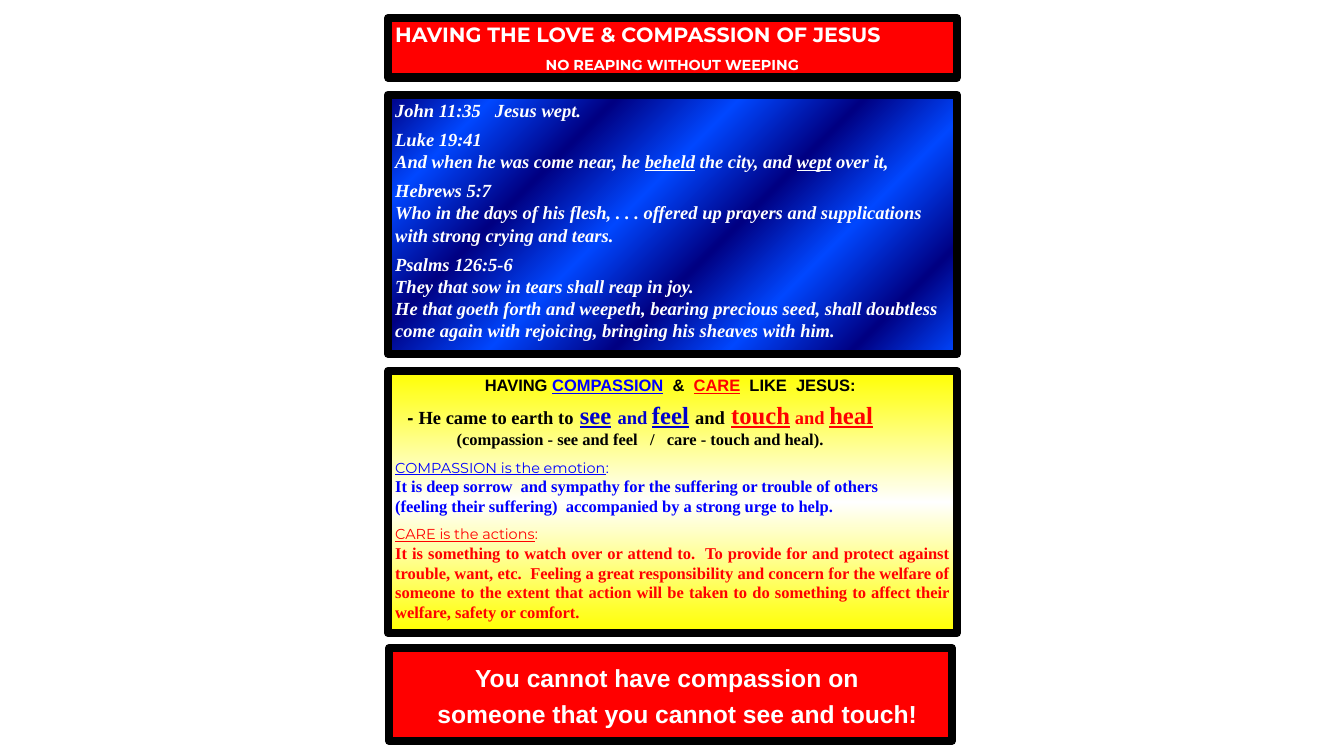
from dataclasses import dataclass, field, replace

from lxml import etree
from pptx import Presentation
from pptx import util as u
from pptx.dml.color import RGBColor
from pptx.enum import shapes, text
from pptx.oxml import ns


@dataclass(frozen=True)
class Theme:
    white: str = "FFFFFF"
    black: str = "000000"
    red: str = "FF0000"
    blue: str = "0000FF"
    deep_blue: str = "0000CC"
    navy: str = "000082"
    azure: str = "0047FF"
    yellow: str = "FFFF00"
    sans: str = "Arial"
    serif: str = "Times New Roman"
    heading: str = "Montserrat"
    title: float = 14.7
    big: float = 17.6
    verse: float = 13.2
    body: float = 11.8
    small: float = 10.3
    border: float = 6


THEME = Theme()


@dataclass(frozen=True)
class Style:
    font: str
    size: float
    color: str
    bold: bool = True
    italic: bool = False
    underline: bool = False


@dataclass(frozen=True)
class Span:
    words: str
    style: Style


@dataclass(frozen=True)
class Line:
    spans: list[Span]
    align: text.PP_ALIGN = text.PP_ALIGN.LEFT
    gap: float = 0  # points above the line
    indent: float = 0  # inches


@dataclass(frozen=True)
class Panel:
    left: float
    top: float
    width: float
    height: float
    colors: list[str]
    lines: list[Line]
    stops: list[int] = field(default_factory=list)
    angle: int = 0
    margin_top: float = 0.04


def under(style: Style) -> Style:
    return replace(style, underline=True)


def line(words: str, style: Style, **layout) -> Line:
    return Line([Span(words, style)], **layout)


def fill_gradient(box, panel: Panel) -> None:
    box.fill.gradient()
    grad = box._element.spPr.find(ns.qn("a:gradFill"))
    for child in list(grad):
        grad.remove(child)
    stop_list = etree.SubElement(grad, ns.qn("a:gsLst"))
    for position, color in zip(panel.stops, panel.colors):
        stop = etree.SubElement(stop_list, ns.qn("a:gs"), pos=str(position * 1000))
        etree.SubElement(stop, ns.qn("a:srgbClr"), val=color)
    etree.SubElement(grad, ns.qn("a:lin"), ang=str(panel.angle * 60000), scaled="0")


def add_line(para, content: Line) -> None:
    para.alignment = content.align
    para.space_before = u.Pt(content.gap)
    if content.indent:
        para._p.get_or_add_pPr().set("marL", str(u.Inches(content.indent)))
    for piece in content.spans:
        span = para.add_run()
        span.text = piece.words
        font, style = span.font, piece.style
        font.name, font.size = style.font, u.Pt(style.size)
        font.bold, font.italic = style.bold, style.italic
        font.underline = style.underline
        font.color.rgb = RGBColor.from_string(style.color)


def add_panel(page, panel: Panel) -> None:
    place = map(u.Inches, (panel.left, panel.top, panel.width, panel.height))
    box = page.shapes.add_shape(shapes.MSO_SHAPE.RECTANGLE, *place)
    box.shadow.inherit = False
    if panel.stops:
        fill_gradient(box, panel)
    else:
        box.fill.solid()
        box.fill.fore_color.rgb = RGBColor.from_string(panel.colors[0])
    box.line.color.rgb = RGBColor.from_string(THEME.black)
    box.line.width = u.Pt(THEME.border)

    frame = box.text_frame
    frame.word_wrap = True
    frame.auto_size = text.MSO_AUTO_SIZE.SHAPE_TO_FIT_TEXT
    frame.vertical_anchor = text.MSO_ANCHOR.TOP
    frame.margin_left = frame.margin_right = u.Inches(0.07)
    frame.margin_top, frame.margin_bottom = u.Inches(panel.margin_top), u.Inches(0.04)
    for index, content in enumerate(panel.lines):
        add_line(frame.add_paragraph() if index else frame.paragraphs[0], content)


def build_panels() -> list[Panel]:
    t = THEME
    center, justify = text.PP_ALIGN.CENTER, text.PP_ALIGN.JUSTIFY
    title = Style(t.heading, t.title, t.white)
    verse = Style(t.serif, t.verse, t.white, italic=True)
    topic = Style(t.sans, t.body, t.black)
    lead = Style(t.serif, t.verse, t.black)
    see, touch = (Style(t.serif, t.big, c) for c in (t.deep_blue, t.red))
    label = Style(t.heading, t.small, t.blue, bold=False)
    red_label = replace(label, color=t.red)
    body = Style(t.serif, t.body, t.blue)
    closing = Style(t.sans, t.big, t.white)

    # Title banner
    banner = Panel(3.85, 0.18, 5.64, 0.59, [t.red], [
        line("HAVING THE LOVE & COMPASSION OF JESUS", title),
        line("NO REAPING WITHOUT WEEPING", replace(title, size=t.small),
             align=center, gap=6.5),
    ])

    # Bible verses
    verses = Panel(3.85, 0.94, 5.64, 2.57, [t.navy, t.azure] * 4, [
        line("John 11:35   Jesus wept.", verse),
        line("Luke 19:41", verse, gap=5),
        Line([Span("And when he was come near, he ", verse), Span("beheld", under(verse)),
              Span(" the city, and ", verse), Span("wept", under(verse)),
              Span(" over it,", verse)]),
        line("Hebrews 5:7", verse, gap=5),
        line("Who in the days of his flesh, . . . offered up prayers and supplications "
             "with strong crying and tears.", verse),
        line("Psalms 126:5-6", verse, gap=5),
        line("They that sow in tears shall reap in joy.", verse),
        line("He that goeth forth and weepeth, bearing precious seed, shall doubtless "
             "come again with rejoicing, bringing his sheaves with him.", verse),
    ], stops=[0, 13, 28, 43, 58, 72, 87, 100], angle=45)

    # Compassion and care
    meaning = Panel(3.85, 3.68, 5.64, 2.6, [t.yellow, t.white, t.yellow], [
        Line([Span("HAVING ", topic), Span("COMPASSION", under(replace(topic, color=t.blue))),
              Span("  &  ", topic), Span("CARE", under(replace(topic, color=t.red))),
              Span("  LIKE  JESUS: ", topic)], align=center),
        Line([Span("- ", replace(lead, font=t.sans)), Span("He came to earth to", lead),
              Span(" ", see), Span("see", under(see)), Span(" ", see),
              Span("and ", replace(see, size=t.verse)), Span("feel", under(see)),
              Span(" ", see), Span("and", lead), Span(" ", see),
              Span("touch", under(touch)), Span(" and ", replace(touch, size=t.verse)),
              Span("heal", under(touch))], gap=3.5, indent=0.12),
        line("(compassion - see and feel   /   care - touch and heal).",
             replace(lead, size=t.body), indent=0.61),
        Line([Span("COMPASSION is the emotion", under(label)), Span(": ", label)],
             align=justify, gap=7),
        line("It is deep sorrow  and sympathy for the suffering or trouble of others ",
             body, align=justify),
        line("(feeling their suffering)  accompanied by a strong urge to help.",
             body, align=justify),
        Line([Span("CARE is the actions", under(red_label)), Span(": ", red_label)],
             align=justify, gap=7),
        line("It is something to watch over or attend to.  To provide for and protect "
             "against trouble, want, etc.  Feeling a great responsibility and concern for "
             "the welfare of someone to the extent that action will be taken to do "
             "something to affect their welfare, safety or comfort.",
             replace(body, color=t.red), align=justify),
    ], stops=[0, 50, 100], angle=90)

    # Closing statement
    ending = Panel(3.86, 6.43, 5.58, 0.92, [t.red], [
        line("You cannot have compassion on ", closing, align=center),
        line("someone that you cannot see and touch!", closing, align=center,
             gap=4.5, indent=0.14),
    ], margin_top=0.15)
    return [banner, verses, meaning, ending]


def main() -> None:
    deck = Presentation()
    deck.slide_width, deck.slide_height = u.Inches(13.33), u.Inches(7.5)
    page = deck.slides.add_slide(deck.slide_layouts[6])
    for panel in build_panels():
        add_panel(page, panel)
    deck.save("out.pptx")


if __name__ == "__main__":
    main()
